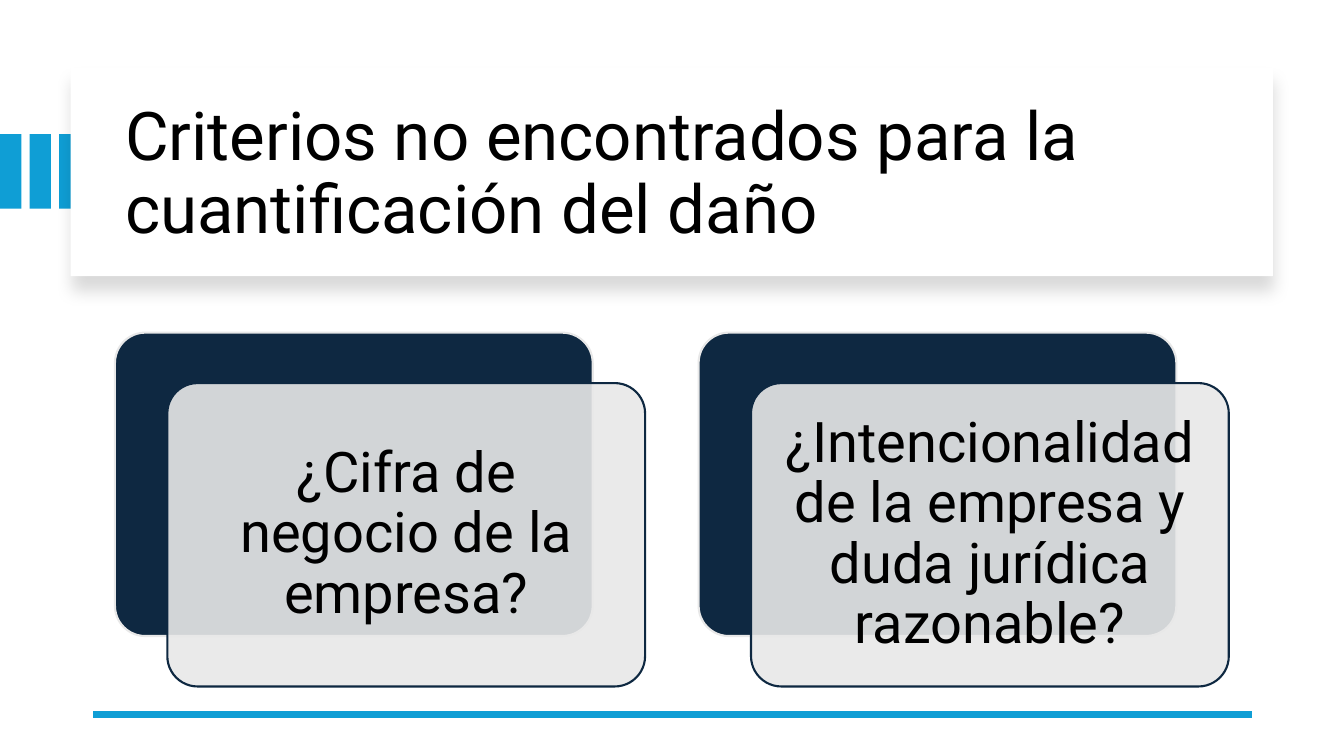
"""Build the slide on criteria missing from the quantification of damages."""
from dataclasses import dataclass

from lxml import etree
from pptx import Presentation
from pptx import util as u
from pptx.dml.color import RGBColor
from pptx.enum import shapes, text
from pptx.oxml import ns


@dataclass(frozen=True)
class Theme:
    """Colours, font and type sizes of the slide."""
    accent: str = "0F9ED5"
    navy: str = "0E2841"
    grey: str = "E8E8E8"
    white: str = "FFFFFF"
    black: str = "000000"
    font: str = "Roboto"
    title_size: int = 48
    card_size: int = 40


@dataclass(frozen=True)
class Box:
    """A rectangle in percentages of the slide's width and height."""
    x: float
    y: float
    w: float
    h: float

    def shift(self, dx: float, dy: float = 0) -> "Box":
        """Return the box moved by the given shares."""
        return Box(self.x + dx, self.y + dy, self.w, self.h)

    def inset(self, dx: float, dy: float) -> "Box":
        """Return the box shrunk on every side."""
        return Box(self.x + dx, self.y + dy, self.w - 2 * dx, self.h - 2 * dy)

    def emu(self) -> tuple[int, int, int, int]:
        """Return left, top, width and height in EMU."""
        return across(self.x), down(self.y), across(self.w), down(self.h)


THEME = Theme()
WIDTH, HEIGHT = u.Inches(13.333), u.Inches(7.5)
BAR, BAR_COUNT, BAR_PITCH = Box(0, 17.73, 1.6, 9.87), 3, 2.2
PANEL = Box(5.25, 8.93, 89.47, 27.6)
TITLE = Box(8.55, 11.87, 83.5, 22.67)
RULE_Y, RULE_LEFT, RULE_RIGHT = 94.53, 6.9, 93.15
CARD, CARD_PITCH = Box(8.55, 44, 35.55, 40.13), 43.43
QUESTIONS = (
    "¿Cifra de negocio de la empresa?",
    "¿Intencionalidad de la empresa y duda jurídica razonable?",
)


def across(share: float) -> int:
    """Convert a percentage of the slide's width to EMU."""
    return round(WIDTH * share / 100)


def down(share: float) -> int:
    """Convert a percentage of the slide's height to EMU."""
    return round(HEIGHT * share / 100)


def rgb(colour: str) -> RGBColor:
    """Return the colour object for a hex code."""
    return RGBColor.from_string(colour)


def add_block(s, box: Box, fill: str, line: str | None = None, rounded: bool = False):
    """Add a plain or rounded rectangle without shadow."""
    kind = shapes.MSO_SHAPE.ROUNDED_RECTANGLE if rounded else shapes.MSO_SHAPE.RECTANGLE
    sp = s.shapes.add_shape(kind, *box.emu())
    sp.shadow.inherit = False
    sp.fill.solid()
    sp.fill.fore_color.rgb = rgb(fill)
    if rounded:
        sp.adjustments[0] = 0.1
    if line:
        sp.line.color.rgb = rgb(line)
        sp.line.width = u.Pt(1.5)
    else:
        sp.line.fill.background()
    return sp


def set_alpha(colour, percent: int) -> None:
    """Set the opacity of a colour element."""
    etree.SubElement(colour, ns.qn("a:alpha"), val=str(percent * 1000))


def cast_shadow(sp) -> None:
    """Give a shape a soft shadow that falls straight down."""
    effects = sp.element.spPr.find(ns.qn("a:effectLst"))
    shadow = etree.SubElement(effects, ns.qn("a:outerShdw"), blurRad=str(u.Pt(11)),
                              dist=str(u.Pt(10)), dir="5400000", algn="t", rotWithShape="0")
    colour = etree.SubElement(shadow, ns.qn("a:srgbClr"), val=THEME.black)
    set_alpha(colour, 15)


def write(sp, words: str, size: int, align: text.PP_ALIGN) -> None:
    """Fill a shape with one paragraph, centred vertically."""
    tf = sp.text_frame
    tf.text = words
    tf.word_wrap = True
    tf.auto_size = text.MSO_AUTO_SIZE.NONE
    tf.vertical_anchor = text.MSO_ANCHOR.MIDDLE
    p = tf.paragraphs[0]
    p.alignment = align
    p.line_spacing = 0.9
    p.font.name = THEME.font
    p.font.size = u.Pt(size)
    p.font.color.rgb = rgb(THEME.black)


def add_heading(s) -> None:
    """Add the accent bars, the raised panel and the title."""
    for i in range(BAR_COUNT):
        add_block(s, BAR.shift(i * BAR_PITCH), THEME.accent)
    panel = add_block(s, PANEL, THEME.white)
    cast_shadow(panel)
    title = s.shapes.title
    title.left, title.top, title.width, title.height = TITLE.emu()
    write(title, "Criterios no encontrados para la cuantificación del daño",
          THEME.title_size, text.PP_ALIGN.LEFT)
    panel.element.addnext(title.element)


def add_rule(s) -> None:
    """Add the accent line at the foot of the slide."""
    y = down(RULE_Y)
    rule = s.shapes.add_connector(shapes.MSO_CONNECTOR.STRAIGHT,
                                  across(RULE_RIGHT), y, across(RULE_LEFT), y)
    rule.line.color.rgb = rgb(THEME.accent)
    rule.line.width = u.Pt(4.5)
    etree.SubElement(rule.element.spPr, ns.qn("a:effectLst"))


def add_card(s, back: Box, question: str) -> None:
    """Add a dark card, the translucent card over it and its question."""
    front = back.shift(3.9, 6.67)
    add_block(s, back, THEME.navy, THEME.grey, rounded=True)
    sp = add_block(s, front, THEME.grey, THEME.navy, rounded=True)
    set_alpha(sp.element.spPr.find(f"{ns.qn('a:solidFill')}/{ns.qn('a:srgbClr')}"), 90)
    label = s.shapes.add_textbox(*front.inset(0.68, 1.2).emu())
    tf = label.text_frame
    tf.margin_left = tf.margin_right = tf.margin_top = tf.margin_bottom = u.Inches(0.17)
    write(label, question, THEME.card_size, text.PP_ALIGN.CENTER)


def main() -> None:
    """Build and save the presentation."""
    prs = Presentation()
    prs.slide_width, prs.slide_height = WIDTH, HEIGHT
    s = prs.slides.add_slide(prs.slide_layouts.get_by_name("Title Only"))
    add_heading(s)
    add_rule(s)
    for i, question in enumerate(QUESTIONS):
        add_card(s, CARD.shift(i * CARD_PITCH), question)
    prs.save("out.pptx")


if __name__ == "__main__":
    main()
